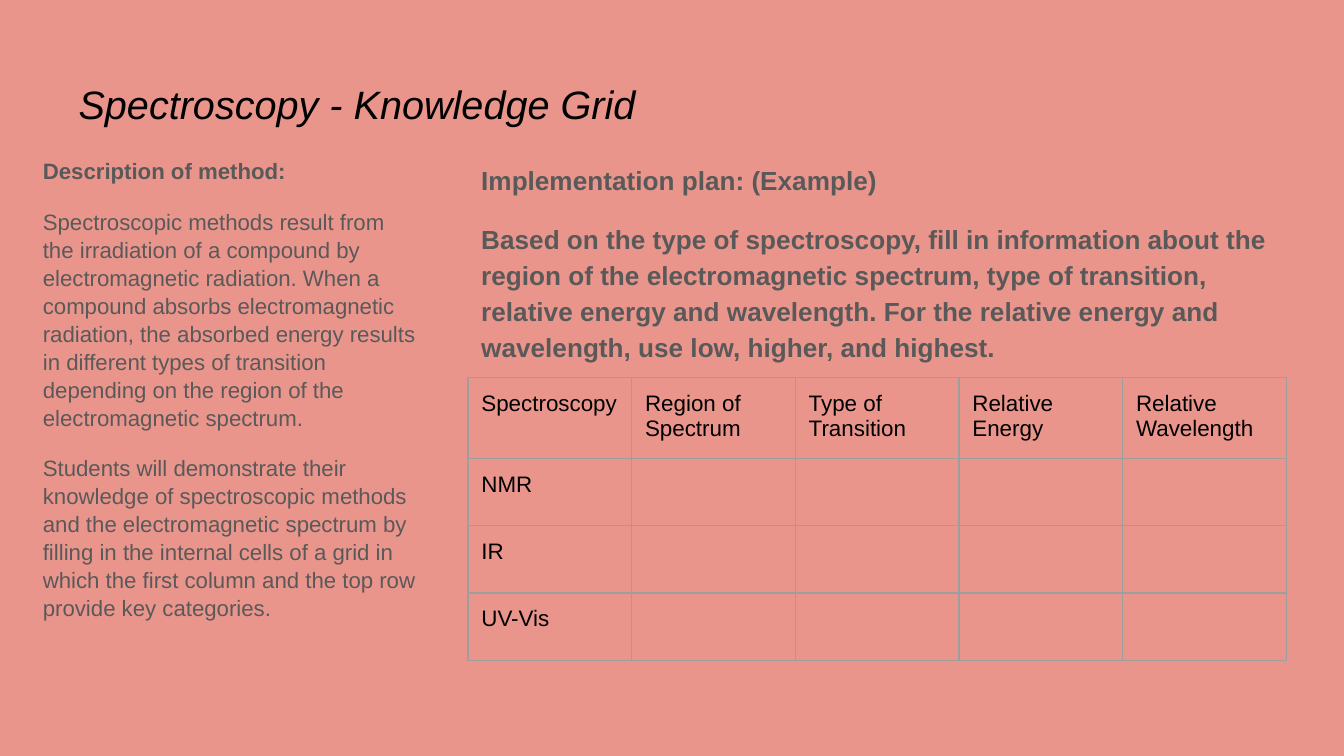
import pptx
import pptx.util
import pptx.dml.color
import pptx.enum.text
import pptx.oxml

Pt = pptx.util.Pt

FONT = "Arial"
BACK, BLACK, GRAY, RULE = "EA958C", "000000", "595959", "9E9E9E"
INSET = 7.2

# Each paragraph is (text, bold, italic)
TITLE = [("Spectroscopy - Knowledge Grid", False, True)]
METHOD = [
    ("Description of method:", True, False),
    ("Spectroscopic methods result from the irradiation of a compound by "
     "electromagnetic radiation. When a compound absorbs electromagnetic "
     "radiation, the absorbed energy results in different types of transition "
     "depending on the region of the electromagnetic spectrum.", False, False),
    ("Students will demonstrate their knowledge of spectroscopic methods and "
     "the electromagnetic spectrum by filling in the internal cells of a grid "
     "in which the first column and the top row provide key categories.",
     False, False),
]
PLAN = [
    ("Implementation plan: (Example)", True, False),
    ("Based on the type of spectroscopy, fill in information about the region "
     "of the electromagnetic spectrum, type of transition, relative energy and "
     "wavelength. For the relative energy and wavelength, use low, higher, and "
     "highest.", True, False),
]
# Each block is (paragraphs, left, top, width, height, size, colour, spacing)
BLOCKS = [
    (TITLE, 35, 35.6, 671, 45, 21.2, BLACK, 1.0),
    (METHOD, 15.9, 76.5, 214.4, 305, 11.9, GRAY, 1.05),
    (PLAN, 250.7, 78.5, 445, 302, 14, GRAY, 1.15),
]
HEADS = ["Spectroscopy", "Region of Spectrum", "Type of Transition",
         "Relative Energy", "Relative Wavelength"]
KINDS = ["NMR", "IR", "UV-Vis"]
GRID_X, GRID_Y, COL_W, HEAD_H, ROW_H = 250.7, 202.4, 87.7, 41.3, 34.4


def color(code):
    return pptx.dml.color.RGBColor.from_string(code)


def write(para, text, size, code, bold=False, italic=False):
    run = para.add_run()
    run.text = text
    font = run.font
    font.name, font.size, font.bold, font.italic = FONT, Pt(size), bold, italic
    font.color.rgb = color(code)


def add_block(slide, paras, left, top, width, height, size, code, space):
    box = slide.shapes.add_textbox(Pt(left), Pt(top), Pt(width), Pt(height))
    frame = box.text_frame
    frame.word_wrap = True
    frame.vertical_anchor = pptx.enum.text.MSO_ANCHOR.TOP
    frame.margin_left = frame.margin_right = Pt(INSET)
    frame.margin_top = frame.margin_bottom = Pt(INSET)
    for i, (text, bold, italic) in enumerate(paras):
        para = frame.add_paragraph() if i else frame.paragraphs[0]
        para.line_spacing = space
        para.space_before = Pt(12 if i else 0)
        write(para, text, size, code, bold, italic)


def add_rules(cell):
    """Draw a thin line on all four sides of a cell."""
    props = cell._tc.get_or_add_tcPr()
    for i, side in enumerate("LRTB"):
        props.insert(i, pptx.oxml.parse_xml(
            f'<a:ln{side} xmlns:a="http://schemas.openxmlformats.org/drawingml/2006/main"'
            f' w="{Pt(0.75)}"><a:solidFill><a:srgbClr val="{RULE}"/></a:solidFill>'
            f'<a:prstDash val="solid"/></a:ln{side}>'))


def add_grid(slide):
    rows = [HEADS] + [[kind] + [""] * (len(HEADS) - 1) for kind in KINDS]
    table = slide.shapes.add_table(
        len(rows), len(HEADS), Pt(GRID_X), Pt(GRID_Y),
        Pt(COL_W * len(HEADS)), Pt(HEAD_H + ROW_H * len(KINDS))).table
    table.first_row = table.horz_banding = False
    for col in table.columns:
        col.width = Pt(COL_W)
    for r, texts in enumerate(rows):
        table.rows[r].height = Pt(ROW_H if r else HEAD_H)
        for c, text in enumerate(texts):
            cell = table.cell(r, c)
            cell.margin_left = cell.margin_right = Pt(INSET)
            cell.margin_top = cell.margin_bottom = Pt(INSET)
            cell.fill.background()
            add_rules(cell)
            if text:
                write(cell.text_frame.paragraphs[0], text, 12, BLACK)


def main():
    deck = pptx.Presentation()
    deck.slide_width, deck.slide_height = Pt(720), Pt(405)
    slide = deck.slides.add_slide(deck.slide_layouts[6])
    fill = slide.background.fill
    fill.solid()
    fill.fore_color.rgb = color(BACK)
    for block in BLOCKS:
        add_block(slide, *block)
    add_grid(slide)
    deck.save("out.pptx")


if __name__ == "__main__":
    main()
